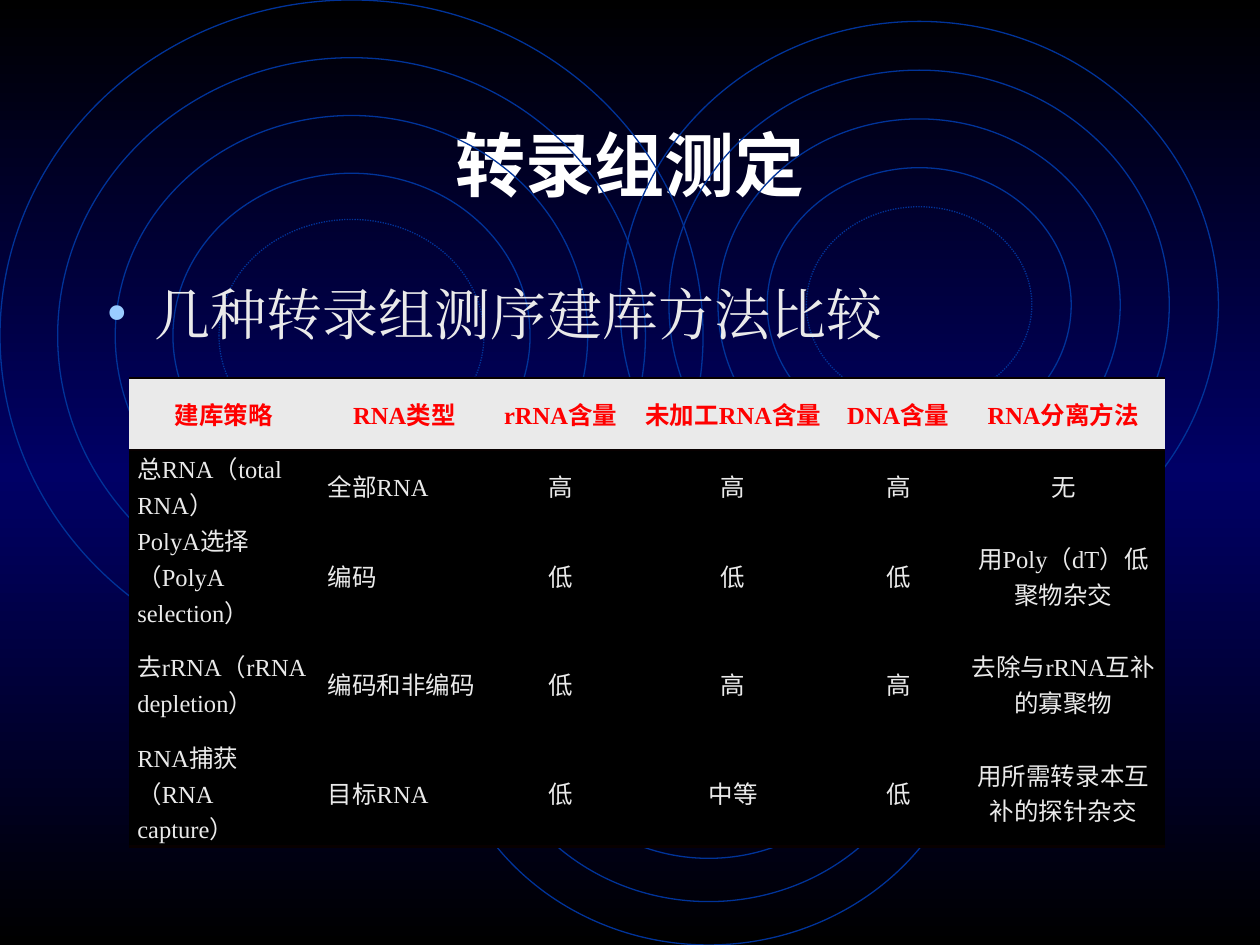
from copy import deepcopy
from itertools import groupby

from lxml.etree import SubElement
from pptx import Presentation
from pptx.dml.color import RGBColor
from pptx.enum.dml import MSO_LINE
from pptx.enum.shapes import MSO_SHAPE
from pptx.enum.text import MSO_ANCHOR, PP_ALIGN
from pptx.oxml.ns import qn
from pptx.util import Inches, Pt

BLACK = RGBColor(0x00, 0x00, 0x00)
NAVY = RGBColor(0x00, 0x00, 0x66)
BLUE = RGBColor(0x00, 0x33, 0x99)
SKY = RGBColor(0x99, 0xCC, 0xFF)
WHITE = RGBColor(0xFF, 0xFF, 0xFF)
PALE = RGBColor(0xEA, 0xEA, 0xEA)
RED = RGBColor(0xFF, 0x00, 0x00)
DARK = RGBColor(0x08, 0x00, 0x00)

SANS = "Noto Sans CJK SC"
SERIF = "Times New Roman"

RINGS = [(0, 0, 5.58, 5.33), (3.5, 3.5, 4.25, 4), (4.92, 0.17, 4.75, 4.5)]
STEPS = [0, 1, 2, 3, 3.8]
COLS = [1.51, 1.36, 1.12, 1.62, 1, 1.62]
ROWS = [0.57, 0.57, 0.86, 0.86, 0.86]
CELLS = [
    ["建库策略", "RNA类型", "rRNA含量", "未加工RNA含量", "DNA含量", "RNA分离方法"],
    ["总RNA（total RNA）", "全部RNA", "高", "高", "高", "无"],
    ["PolyA选择（PolyA selection）", "编码", "低", "低", "低", "用Poly（dT）低聚物杂交"],
    ["去rRNA（rRNA depletion）", "编码和非编码", "低", "高", "高", "去除与rRNA互补的寡聚物"],
    ["RNA捕获（RNA capture）", "目标RNA", "低", "中等", "低", "用所需转录本互补的探针杂交"],
]


def style(run, face, size, color, bold=False):
    """Set the face, size, colour and weight of a run."""
    font = run.font
    font.name, font.size, font.bold = face, Pt(size), bold
    font.color.rgb = color
    SubElement(run._r.get_or_add_rPr(), qn("a:ea"), typeface=face)


def paint_back(slide):
    """Fill the background with a black, navy, black gradient."""
    fill = slide.background.fill
    fill.gradient()
    fill.gradient_angle = 270
    stops = slide.element.find(".//" + qn("a:gsLst"))
    stops.append(deepcopy(stops[-1]))
    for stop, color, place in zip(fill.gradient_stops, (BLACK, NAVY, BLACK), (0, 0.5, 1)):
        stop.color.rgb = color
        stop.position = place


def add_rings(slide, left, top, width, height):
    """Draw a nest of rings, the inmost one dotted."""
    for step in STEPS:
        dx, dy = 0.082 * width * step, 0.086 * height * step
        ring = slide.shapes.add_shape(
            MSO_SHAPE.OVAL, Inches(left + dx), Inches(top + dy),
            Inches(width - 2 * dx), Inches(height - 2 * dy))
        ring.shadow.inherit = False
        ring.fill.background()
        ring.line.color.rgb = BLUE
        ring.line.width = Pt(0.75)
        if step == STEPS[-1]:
            ring.line.dash_style = MSO_LINE.ROUND_DOT


def set_title(slide, text):
    """Place and format the slide title."""
    title = slide.shapes.title
    title.left, title.top = Inches(0.75), Inches(0.67)
    title.width, title.height = Inches(8.5), Inches(1.25)
    frame = title.text_frame
    frame.text = text
    frame.vertical_anchor = MSO_ANCHOR.MIDDLE
    para = frame.paragraphs[0]
    para.alignment = PP_ALIGN.CENTER
    style(para.runs[0], SANS, 40, WHITE, True)


def add_point(slide, text):
    """Add the bulleted line above the table."""
    box = slide.shapes.add_textbox(Inches(0.75), Inches(2.17), Inches(8.5), Inches(4.5))
    frame = box.text_frame
    frame.word_wrap = True
    frame.text = text
    para = frame.paragraphs[0]
    para.space_before = Pt(6.4)
    style(para.runs[0], SERIF, 32, PALE)
    props = para._p.get_or_add_pPr()
    props.set("marL", str(Inches(0.38)))
    props.set("indent", str(-Inches(0.38)))
    tint = SubElement(props, qn("a:buClr"))
    SubElement(tint, qn("a:srgbClr"), val=str(SKY))
    SubElement(props, qn("a:buSzPct"), val="110000")
    SubElement(props, qn("a:buFont"), typeface=SERIF)
    SubElement(props, qn("a:buChar"), char="•")


def set_edges(cell, edges):
    """Rule the named edges of a cell and clear the others."""
    props = cell._tc.get_or_add_tcPr()
    for spot, side in enumerate(("lnL", "lnR", "lnT", "lnB")):
        width = edges.get(side, 0)
        line = props.makeelement(qn("a:" + side), {"w": str(Pt(width))})
        props.insert(spot, line)
        if width:
            fill = SubElement(line, qn("a:solidFill"))
            SubElement(fill, qn("a:srgbClr"), val=str(DARK))
        else:
            SubElement(line, qn("a:noFill"))


def fill_cell(cell, text, head, left):
    """Write a cell, with Latin and Chinese parts in their own fonts."""
    cell.fill.solid()
    cell.fill.fore_color.rgb = PALE if head else BLACK
    cell.vertical_anchor = MSO_ANCHOR.MIDDLE
    cell.margin_left = cell.margin_right = Inches(0.07)
    cell.margin_top = cell.margin_bottom = 0
    para = cell.text_frame.paragraphs[0]
    para.alignment = PP_ALIGN.LEFT if left else PP_ALIGN.CENTER
    for latin, part in groupby(text, str.isascii):
        run = para.add_run()
        run.text = "".join(part)
        style(run, SERIF if latin else SANS, 14, RED if head else PALE, head)


def add_grid(slide):
    """Add the table that compares the methods."""
    table = slide.shapes.add_table(
        len(ROWS), len(COLS), Inches(1.02), Inches(3),
        Inches(sum(COLS)), Inches(sum(ROWS))).table
    for col, width in zip(table.columns, COLS):
        col.width = Inches(width)
    for row, height in zip(table.rows, ROWS):
        row.height = Inches(height)
    edges = {0: {"lnT": 1.5, "lnB": 1}, 1: {"lnT": 1}, len(ROWS) - 1: {"lnB": 1.5}}
    for r, texts in enumerate(CELLS):
        for c, text in enumerate(texts):
            cell = table.cell(r, c)
            fill_cell(cell, text, r == 0, r > 0 and c < 2)
            set_edges(cell, edges.get(r, {}))


def main():
    """Build the slide and save it."""
    deck = Presentation()
    deck.slide_width, deck.slide_height = Inches(10), Inches(7.5)
    slide = deck.slides.add_slide(deck.slide_layouts[5])
    paint_back(slide)
    for nest in RINGS:
        add_rings(slide, *nest)
    set_title(slide, "转录组测定")
    add_point(slide, "几种转录组测序建库方法比较")
    add_grid(slide)
    deck.save("out.pptx")


if __name__ == "__main__":
    main()
